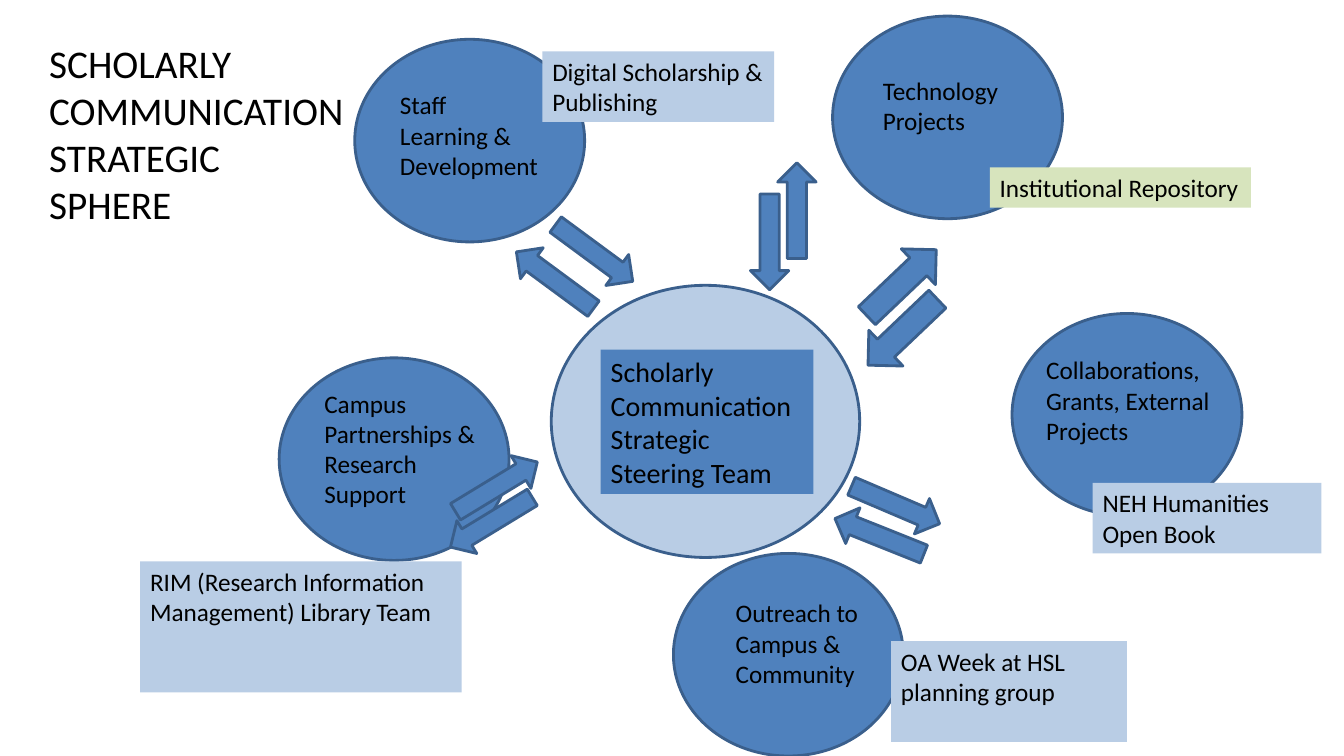
from pptx import Presentation
from pptx.dml.color import RGBColor
from pptx.enum.shapes import MSO_SHAPE
from pptx.enum.text import MSO_ANCHOR, PP_ALIGN
from pptx.util import Pt

OVAL = MSO_SHAPE.OVAL
RECTANGLE = MSO_SHAPE.RECTANGLE
RIGHT_ARROW = MSO_SHAPE.RIGHT_ARROW
TOP = MSO_ANCHOR.TOP
LEFT = PP_ALIGN.LEFT

FONT = "Calibri"
COLORS = {
    "blue": "4F81BD",
    "outline": "3A5F8C",
    "pale_blue": "B9CDE5",
    "pale_green": "D7E4BD",
    "text": "000000",
}

TOPIC_SIZE = (164.2, 144.7)
ARROW_LENGTH = 68.4
THIN, THICK = 27.4, 35.3

# Topic circles: left, top, then label text and its box
TOPICS = [
    (722.9, 223.9, "Collaborations, Grants, External Projects", (740.2, 249.8, 132.5, 50.4)),
    (594.7, 11.5, "Technology\nProjects", (623.5, 50.4, 180.7, 50.4)),
    (253.4, 28.1, "Staff Learning & Development", (278.6, 60.5, 113.8, 50.4)),
    (199.4, 255.6, "Campus Partnerships & Research Support", (224.6, 273.6, 141.1, 28.8)),
    (481, 395.3, "Outreach to Campus & Community", (518.4, 423.4, 156.2, 72)),
]

# Project tags: text, box, fill
TAGS = [
    ("Digital Scholarship & Publishing", (387.4, 36.7, 165.6, 50.4), "pale_blue"),
    ("NEH Humanities Open Book", (780.5, 344.9, 163.4, 50.4), "pale_blue"),
    ("RIM (Research Information Management) Library Team", (100.1, 401, 229.7, 93.6), "pale_blue"),
    ("Institutional Repository", (707, 119.5, 186.5, 28.8), "pale_green"),
    ("OA Week at HSL planning group", (636.5, 457.9, 168.5, 72), "pale_blue"),
]

# Arrows: left, top, thickness, rotation
ARROWS = [
    (609.8, 184.3, THICK, 316.4),
    (610.6, 219.6, THICK, 136.4),
    (535, 136.8, THIN, 270),
    (515.5, 159.1, THIN, 90),
    (390.2, 167, THIN, 36.4),
    (362.2, 186.5, THIN, 216.4),
    (605.5, 347, THIN, 23.1),
    (594, 369.4, THIN, 201.8),
    (320.4, 334.1, THIN, 328.7),
    (316.8, 359.3, THIN, 148.7),
]


def color(name):
    return RGBColor.from_string(COLORS[name])


def points(box):
    return [Pt(length) for length in box]


def write_text(shape, text, size):
    text_frame = shape.text_frame
    text_frame.text = text
    text_frame.word_wrap = True
    text_frame.vertical_anchor = TOP
    for paragraph in text_frame.paragraphs:
        paragraph.alignment = LEFT
        for run in paragraph.runs:
            run.font.name = FONT
            run.font.size = Pt(size)
            run.font.color.rgb = color("text")


def add_filled_shape(slide, kind, box, fill, outlined=True):
    shape = slide.shapes.add_shape(kind, *points(box))
    shape.shadow.inherit = False
    shape.fill.solid()
    shape.fill.fore_color.rgb = color(fill)
    if outlined:
        shape.line.color.rgb = color("outline")
        shape.line.width = Pt(2)
    else:
        shape.line.fill.background()
    return shape


def add_tag(slide, text, box, fill, size=18):
    write_text(add_filled_shape(slide, RECTANGLE, box, fill, outlined=False), text, size)


def add_label(slide, text, box, size=18):
    write_text(slide.shapes.add_textbox(*points(box)), text, size)


def add_arrow(slide, left, top, thickness, rotation):
    box = (left, top, ARROW_LENGTH, thickness)
    add_filled_shape(slide, RIGHT_ARROW, box, "blue").rotation = rotation


def main():
    presentation = Presentation()
    presentation.slide_width = Pt(960)
    presentation.slide_height = Pt(540)
    slide = presentation.slides.add_slide(presentation.slide_layouts[6])

    # Steering team at the centre
    add_filled_shape(slide, OVAL, (393.8, 203.8, 220.3, 194.4), "pale_blue")
    add_tag(slide, "Scholarly Communication\nStrategic Steering Team",
            (429.1, 249.8, 151.9, 103), "blue", size=20)

    # Surrounding topics with their labels
    for left, top, text, label_box in TOPICS:
        add_filled_shape(slide, OVAL, (left, top, *TOPIC_SIZE), "blue")
        add_label(slide, text, label_box)

    # Project tags
    for text, box, fill in TAGS:
        add_tag(slide, text, box, fill)

    # Title
    add_label(slide, "SCHOLARLY COMMUNICATION\nSTRATEGIC SPHERE",
              (28.1, 24.5, 226.1, 198.7), size=28)

    # Two-way arrows
    for arrow in ARROWS:
        add_arrow(slide, *arrow)

    presentation.save("out.pptx")


if __name__ == "__main__":
    main()
